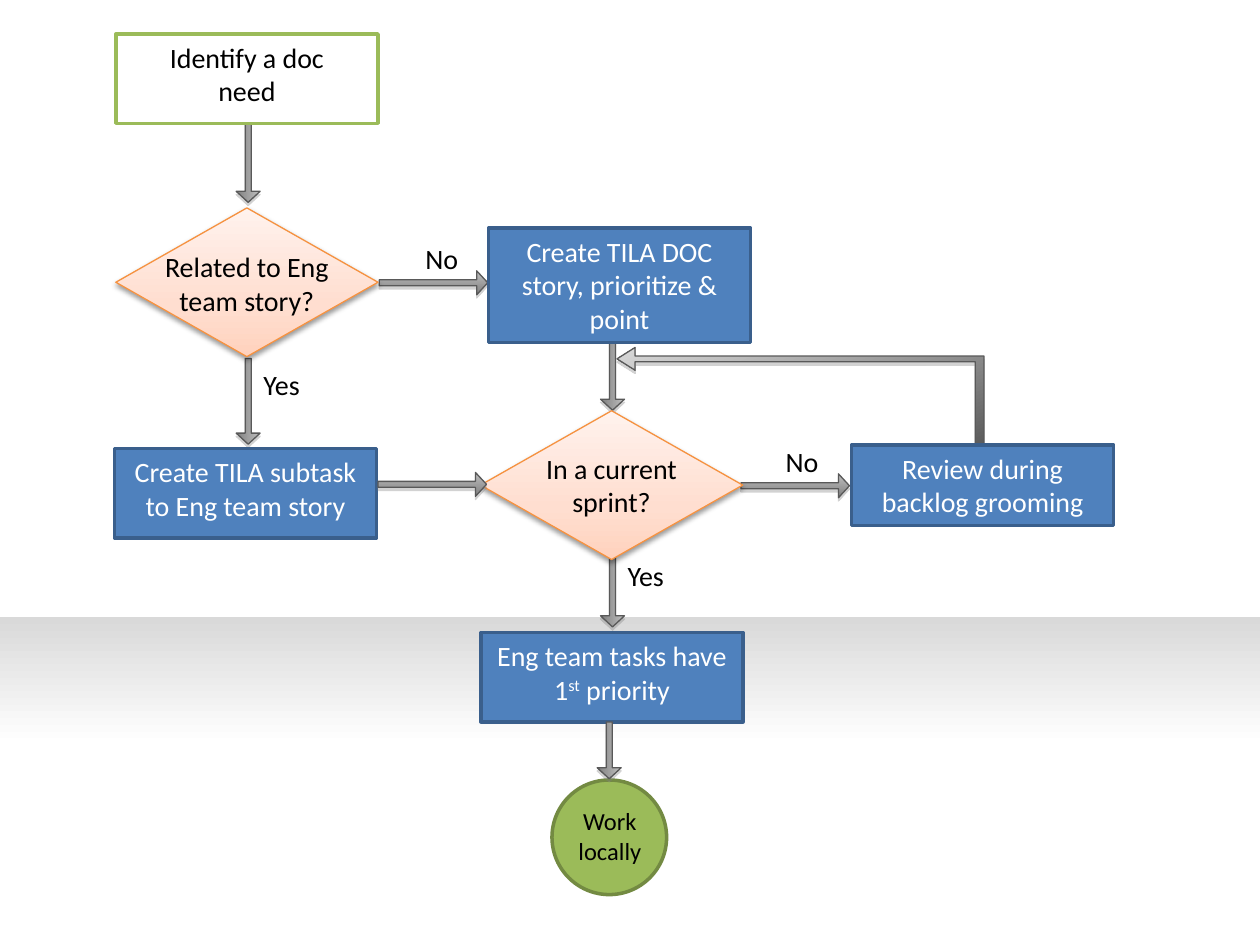
from lxml import etree
from pptx import Presentation
from pptx.dml.color import RGBColor
from pptx.enum.shapes import MSO_SHAPE
from pptx.enum.text import MSO_ANCHOR, PP_ALIGN
from pptx.oxml import parse_xml
from pptx.oxml.ns import nsdecls
from pptx.util import Pt

RECTANGLE = MSO_SHAPE.RECTANGLE
DIAMOND = MSO_SHAPE.DIAMOND
OVAL = MSO_SHAPE.OVAL
RIGHT_ARROW = MSO_SHAPE.RIGHT_ARROW
CENTER = PP_ALIGN.CENTER
TOP = MSO_ANCHOR.TOP

COLORS = {
    "white": "FFFFFF", "black": "000000",
    "blue": "4F81BD", "blue_line": "3A5F8C",
    "green": "9BBB59", "green_line": "738A42",
    "orange_line": "F69240", "gray_line": "595959", "gray_shadow": "808080",
}
# Gradients: stops as (percent, colour), then the clockwise angle
BAND_GRADIENT = ([(0, "FFFFFF"), (61, "FFFFFF"), (100, "D9D9D9")], 270)
ARROW_GRADIENT = ([(0, "BFBFBF"), (100, "7F7F7F")], 90)
LOOP_GRADIENT = ([(0, "595959"), (100, "D9D9D9")], 249)
DECISION_GRADIENT = ([(0, "FFD2BD"), (35, "FFDED0"), (100, "FFF2ED")], 270)
# Shadows: colour, opacity percent, blur, distance
ARROW_SHADOW = ("gray_shadow", 35, 0, 1.8)
DECISION_SHADOW = ("black", 38, 3.1, 1.6)

BOX_WIDTH = 149.8
BOX_HEIGHT = 51.1
DECISION_HEIGHT = 85
ARROW_THICKNESS = 13.7


class FlowSlide:
    """Holds the style and the slide that is being drawn."""

    font_name = "Calibri"
    text_size = 16

    def __init__(self, slide):
        self.slide = slide

    def paint(self, shape, fill, line=None, line_width=2.0, shadow=None):
        """Fill with a colour name or a gradient, then set line and shadow."""
        shape.shadow.inherit = False
        if isinstance(fill, str):
            shape.fill.solid()
            shape.fill.fore_color.rgb = RGBColor.from_string(COLORS[fill])
        else:
            self.set_gradient(shape, *fill)
        if line:
            shape.line.color.rgb = RGBColor.from_string(COLORS[line])
            shape.line.width = Pt(line_width)
        else:
            shape.line.fill.background()
        if shadow:
            self.set_shadow(shape, *shadow)

    def set_gradient(self, shape, stops, angle):
        shape.fill.gradient()
        gradient = shape._element.spPr.find("{*}gradFill")
        stop_xml = "".join(
            f'<a:gs pos="{position * 1000}"><a:srgbClr val="{color}"/></a:gs>'
            for position, color in stops)
        gradient.getparent().replace(gradient, parse_xml(
            f'<a:gradFill {nsdecls("a")} rotWithShape="1"><a:gsLst>{stop_xml}'
            f'</a:gsLst><a:lin ang="{angle * 60000}" scaled="0"/></a:gradFill>'))

    def set_shadow(self, shape, color, opacity, blur, distance):
        effects = shape._element.spPr.find("{*}effectLst")
        namespace = etree.QName(effects).namespace
        shadow = etree.SubElement(
            effects, f"{{{namespace}}}outerShdw", blurRad=str(Pt(blur)),
            dist=str(Pt(distance)), dir="5400000", rotWithShape="0")
        shade = etree.SubElement(
            shadow, f"{{{namespace}}}srgbClr", val=COLORS[color])
        etree.SubElement(
            shade, f"{{{namespace}}}alpha", val=str(opacity * 1000))

    def add_text(self, shape, lines, color, size=None, side_margin=7.2):
        """Add paragraphs; text between carets is superscript."""
        frame = shape.text_frame
        frame_format = {
            "word_wrap": True, "vertical_anchor": TOP,
            "margin_left": Pt(side_margin), "margin_right": Pt(side_margin),
            "margin_top": Pt(3.6), "margin_bottom": Pt(3.6),
        }
        for name, value in frame_format.items():
            setattr(frame, name, value)
        font_format = {"name": self.font_name, "size": Pt(size or self.text_size)}
        for index, line in enumerate(lines):
            paragraph = frame.add_paragraph() if index else frame.paragraphs[0]
            paragraph.alignment = CENTER
            for part, text in enumerate(line.split("^")):
                run = paragraph.add_run()
                run.text = text
                for name, value in font_format.items():
                    setattr(run.font, name, value)
                run.font.color.rgb = RGBColor.from_string(COLORS[color])
                if part % 2:
                    run._r.get_or_add_rPr().set("baseline", "30000")

    def shape(self, kind, left, top, width, height, **style):
        shape = self.slide.shapes.add_shape(
            kind, Pt(left), Pt(top), Pt(width), Pt(height))
        self.paint(shape, **style)
        return shape

    def label(self, left, top, width, height, text, size=None):
        box = self.slide.shapes.add_textbox(
            Pt(left), Pt(top), Pt(width), Pt(height))
        self.add_text(box, [text], "black", size)

    def step(self, left, top, lines, height=BOX_HEIGHT):
        box = self.shape(RECTANGLE, left, top, BOX_WIDTH, height,
                         fill="blue", line="blue_line")
        self.add_text(box, lines, "white")

    def decision(self, left, top, text, text_top):
        self.shape(DIAMOND, left, top, BOX_WIDTH, DECISION_HEIGHT,
                   fill=DECISION_GRADIENT, line="orange_line",
                   line_width=0.75, shadow=DECISION_SHADOW)
        self.label(left + 18.4, text_top, 113, 46, text)

    def arrow(self, x, y, length, down=False):
        """Draw a block arrow whose tail is centred on (x, y)."""
        left = x - length / 2 if down else x
        center_y = y + length / 2 if down else y
        arrow = self.shape(
            RIGHT_ARROW, left, center_y - ARROW_THICKNESS / 2, length,
            ARROW_THICKNESS, fill=ARROW_GRADIENT, line="gray_line",
            line_width=0.75, shadow=ARROW_SHADOW)
        arrow.adjustments[0] = 0.25
        arrow.adjustments[1] = 0.46
        arrow.rotation = 90 if down else 0

    def bent_arrow(self, points):
        builder = self.slide.shapes.build_freeform(
            Pt(points[0][0]), Pt(points[0][1]))
        builder.add_line_segments([(Pt(x), Pt(y)) for x, y in points[1:]])
        self.paint(builder.convert_to_shape(), LOOP_GRADIENT, "gray_line",
                   0.75, ARROW_SHADOW)


def main():
    presentation = Presentation()
    presentation.slide_width, presentation.slide_height = Pt(720), Pt(540)
    flow = FlowSlide(presentation.slides.add_slide(presentation.slide_layouts[6]))

    # Shaded band behind the lower part
    flow.shape(RECTANGLE, 0, 352.8, 720, 187.2, fill=BAND_GRADIENT)

    # Arrows under the boxes
    for x, y in [(350, 185.4), (141.8, 204.8), (141.8, 66.6), (350, 309.2)]:
        flow.arrow(x, y, 49, down=True)
    for x, y in [(216.7, 161.6), (423.4, 277.6)]:
        flow.arrow(x, y, 62)

    # Loop back from the backlog review
    flow.bent_arrow([
        (557.3, 257), (557.3, 206.8), (362.9, 206.8), (362.9, 211.6),
        (352.6, 205.1), (362.9, 198.6), (362.9, 203.5), (562.3, 203.5),
        (562.3, 257), (557.3, 257)])

    # Start
    start = flow.shape(RECTANGLE, 66.2, 19.4, BOX_WIDTH, BOX_HEIGHT,
                       fill="white", line="green")
    flow.add_text(start, ["Identify a doc need"], "black", side_margin=25.6)

    # Decisions
    flow.decision(66.2, 118.8, "Related to Eng team story?", 139)
    flow.decision(274.6, 234.7, "In a current sprint?", 254.2)
    for left, top, answer in [(141.8, 206.6, "Yes"), (233.3, 134.6, "No"),
                              (349.9, 315.4, "Yes"), (439.2, 250.6, "No")]:
        flow.label(left, top, 38.2, 26.6, answer)

    # Steps
    flow.step(279.1, 130.3, ["Create TILA DOC story, prioritize & point"], 65.5)
    flow.step(65.4, 256.3, ["Create TILA subtask", "to Eng team story"])
    flow.step(486.6, 254.2, ["Review during backlog grooming"], 46)
    flow.step(274.8, 361.4, ["Eng team tasks have 1^st^ priority"])

    # End
    flow.shape(OVAL, 315.4, 445.7, 65.5, 65.5, fill="green", line="green_line")
    flow.label(311.8, 457.2, 73.4, 41, "Work locally", size=14)

    # Arrows over the shapes they reach
    flow.arrow(216, 276.8, 62)
    flow.arrow(348.1, 412.6, 32.4, down=True)

    presentation.save("out.pptx")


if __name__ == "__main__":
    main()
